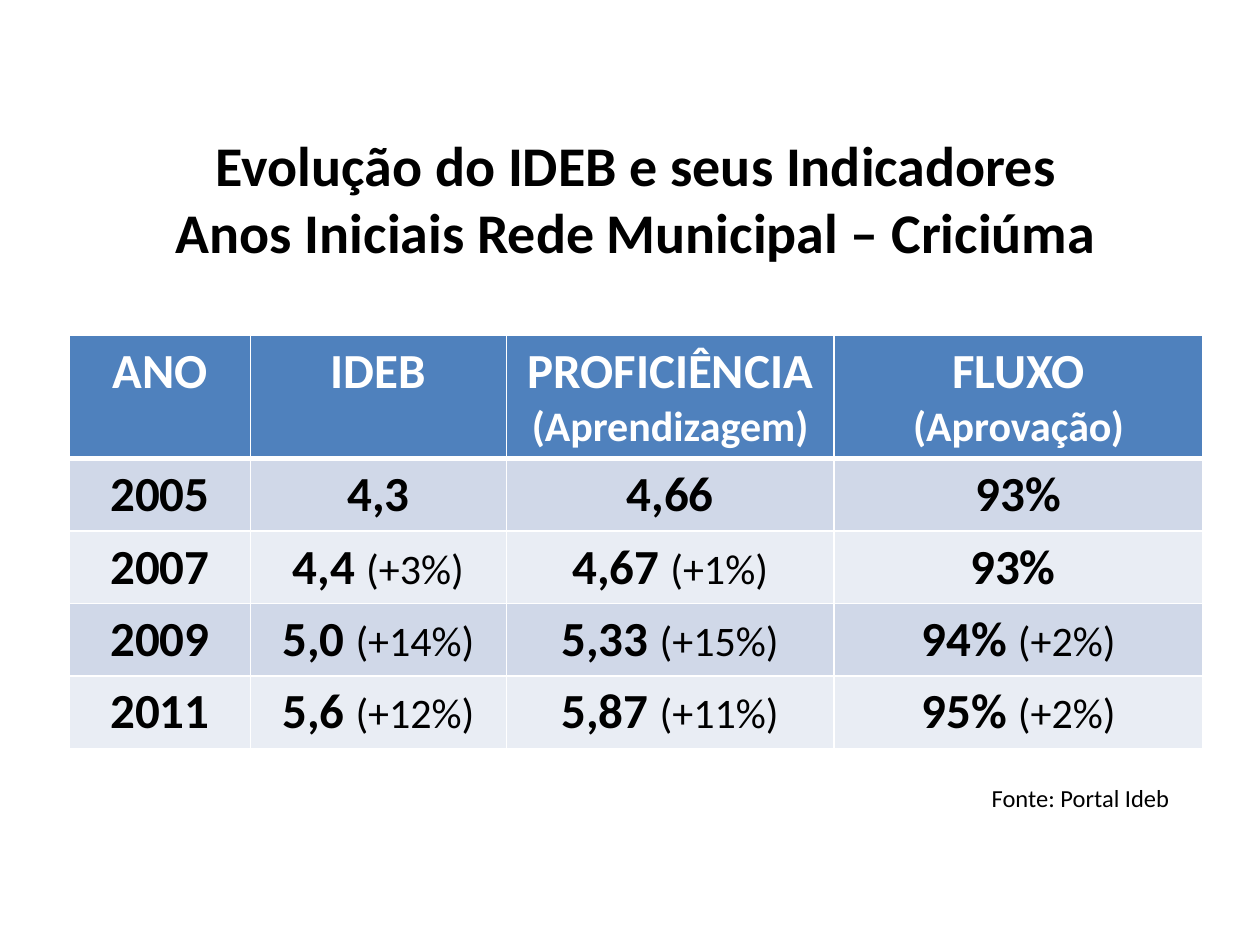
from lxml import etree
from pptx import Presentation
from pptx.dml.color import RGBColor
from pptx.enum import text
from pptx.oxml import ns
from pptx.util import Pt

TITLE = "Evolução do IDEB e seus Indicadores\vAnos Iniciais Rede Municipal – Criciúma"
SOURCE = "Fonte: Portal Ideb"
HEADERS = [("ANO", ""), ("IDEB", ""), ("PROFICIÊNCIA", "(Aprendizagem)"), ("FLUXO", "(Aprovação)")]
RESULTS = [
    [("2005", ""), ("4,3", ""), ("4,66", ""), ("93%", "")],
    [("2007", ""), ("4,4 ", "(+3%)"), ("4,67 ", "(+1%)"), ("93% ", "")],
    [("2009", ""), ("5,0 ", "(+14%)"), ("5,33 ", "(+15%)"), ("94% ", "(+2%)")],
    [("2011", ""), ("5,6 ", "(+12%)"), ("5,87 ", "(+11%)"), ("95% ", "(+2%)")],
]
COLUMN_WIDTHS = [103.5, 146.25, 187.25, 211]
HEADER_HEIGHT, RESULT_HEIGHT = 70.6, 41.4
LEFT, TABLE_TOP = 39.6, 191.5

FONT = "Calibri"
BLACK = RGBColor(0, 0, 0)
WHITE = RGBColor(255, 255, 255)
BLUE = RGBColor(0x4F, 0x81, 0xBD)
BANDS = [RGBColor(0xD0, 0xD8, 0xE8), RGBColor(0xE9, 0xED, 0xF4)]


def style(run, size, color, bold):
    run.font.name = FONT
    run.font.size = Pt(size)
    run.font.color.rgb = color
    run.font.bold = bold


def add_text(slide, content, box, size, bold, align, anchor):
    frame = slide.shapes.add_textbox(*map(Pt, box)).text_frame
    frame.word_wrap = True
    frame.vertical_anchor = anchor
    frame.text = content
    paragraph = frame.paragraphs[0]
    paragraph.alignment = align
    for run in paragraph.runs:
        style(run, size, BLACK, bold)


def set_borders(cell, bottom):
    properties = cell._tc.get_or_add_tcPr()
    sides = [("lnL", 1), ("lnR", 1), ("lnT", 1), ("lnB", bottom)]
    for position, (side, width) in enumerate(sides):
        line = etree.Element(ns.qn(f"a:{side}"), w=str(Pt(width)))
        fill = etree.SubElement(line, ns.qn("a:solidFill"))
        etree.SubElement(fill, ns.qn("a:srgbClr"), val=str(WHITE))
        properties.insert(position, line)


def fill_cell(cell, main, detail, is_header, fill):
    color = WHITE if is_header else BLACK
    frame = cell.text_frame
    frame.text = main
    paragraph = frame.paragraphs[0]
    style(paragraph.runs[0], 28, color, True)
    if detail:
        target = frame.add_paragraph() if is_header else paragraph
        run = target.add_run()
        run.text = detail
        style(run, 24, color, is_header)
    for paragraph in frame.paragraphs:
        paragraph.alignment = text.PP_ALIGN.CENTER
    cell.fill.solid()
    cell.fill.fore_color.rgb = fill


def add_results(slide):
    rows = [HEADERS] + RESULTS
    heights = [HEADER_HEIGHT] + [RESULT_HEIGHT] * len(RESULTS)
    table = slide.shapes.add_table(
        len(rows), len(HEADERS), Pt(LEFT), Pt(TABLE_TOP), Pt(sum(COLUMN_WIDTHS)), Pt(sum(heights))
    ).table
    for column, width in zip(table.columns, COLUMN_WIDTHS):
        column.width = Pt(width)
    for r, (row, height) in enumerate(zip(rows, heights)):
        table.rows[r].height = Pt(height)
        is_header = r == 0
        fill = BLUE if is_header else BANDS[(r - 1) % 2]
        for c, (main, detail) in enumerate(row):
            cell = table.cell(r, c)
            fill_cell(cell, main, detail, is_header, fill)
            set_borders(cell, 3 if is_header else 1)
            if r == 1:
                top = cell._tc.tcPr.find(ns.qn("a:lnT"))
                top.set("w", str(Pt(3)))


def main():
    deck = Presentation()
    deck.slide_width, deck.slide_height = Pt(720), Pt(540)
    slide = deck.slides.add_slide(deck.slide_layouts[6])
    add_text(slide, TITLE, (LEFT, 67.7, 648, 90), 32, True,
             text.PP_ALIGN.CENTER, text.MSO_ANCHOR.MIDDLE)
    add_results(slide)
    add_text(slide, SOURCE, (461.5, 444.2, 213.8, 24.5), 14, False,
             text.PP_ALIGN.RIGHT, text.MSO_ANCHOR.TOP)
    deck.save("out.pptx")


if __name__ == "__main__":
    main()
